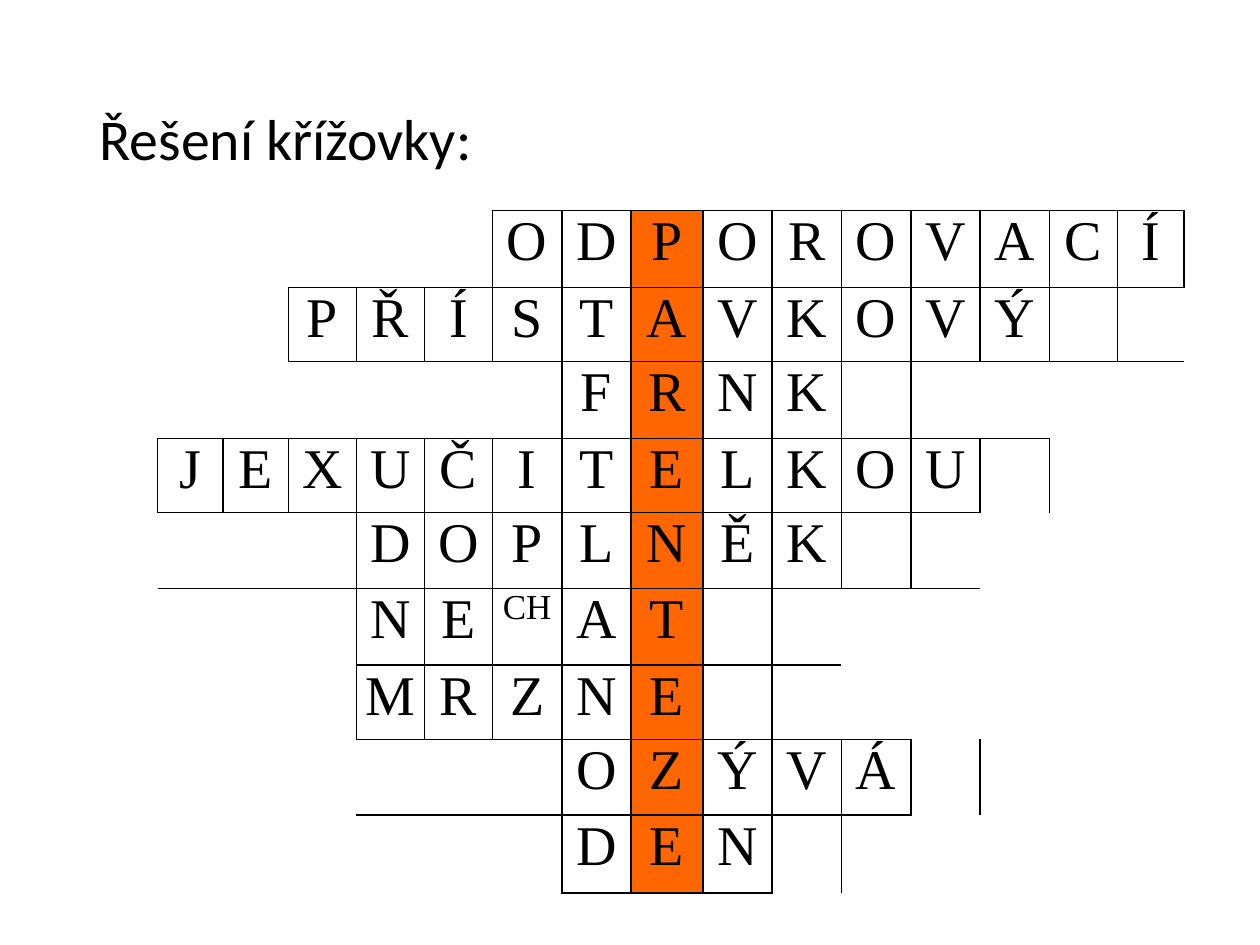
"""Build a slide with a solved Czech crossword as a table."""
from dataclasses import dataclass

from lxml import etree
from pptx import Presentation
from pptx.dml.color import RGBColor
from pptx.enum.text import MSO_ANCHOR, PP_ALIGN
from pptx.oxml.ns import qn
from pptx.util import Inches, Pt

CENTER, LEFT = PP_ALIGN.CENTER, PP_ALIGN.LEFT
MIDDLE = MSO_ANCHOR.MIDDLE
BLACK = RGBColor(0x00, 0x00, 0x00)
ORANGE = RGBColor(0xFF, 0x66, 0x00)
PLAIN_STYLE = "{2D5ABB26-0587-4C30-8999-92F81FD0307C}"
SIDES = {"a:lnL": (0, -1), "a:lnR": (0, 1), "a:lnT": (-1, 0), "a:lnB": (1, 0)}
SOLUTION_COLUMN = 7
COLUMN_WIDTHS = [0.52, 0.52, 0.54, 0.54, 0.54, 0.55, 0.55, 0.57,
                 0.55, 0.55, 0.55, 0.55, 0.55, 0.54, 0.53]
ROW_HEIGHTS = [0.61, 0.59, 0.61, 0.59, 0.6, 0.61, 0.59, 0.6, 0.62]


@dataclass(frozen=True)
class Answer:
    start: int
    letters: list[str]


ANSWERS = [
    Answer(5, list("ODPOROVACÍ")),
    Answer(2, list("PŘÍSTAVKOVÝ")),
    Answer(6, list("FRNK")),
    Answer(0, list("JEXUČITELKOU")),
    Answer(3, list("DOPLNĚK")),
    Answer(3, ["N", "E", "CH", "A", "T"]),
    Answer(3, list("MRZNE")),
    Answer(6, list("OZÝVÁ")),
    Answer(6, list("DEN")),
]


def add_border(cell, side: str) -> None:
    """Draw a thin black line along one side of a cell."""
    line = etree.SubElement(cell._tc.get_or_add_tcPr(), qn(side), w=str(Pt(1)))
    solid = etree.SubElement(line, qn("a:solidFill"))
    etree.SubElement(solid, qn("a:srgbClr"), val=str(BLACK))


def write_letter(cell, letter: str) -> None:
    """Put one centred crossword letter into a cell."""
    cell.margin_left = cell.margin_right = Inches(0.07)
    cell.margin_top = cell.margin_bottom = 0
    cell.text = letter
    paragraph = cell.text_frame.paragraphs[0]
    paragraph.alignment = CENTER
    paragraph.font.name = "Times New Roman"
    paragraph.font.size = Pt(32 if len(letter) == 1 else 20)
    paragraph.font.color.rgb = BLACK


def add_crossword(slide, answers: list[Answer]) -> None:
    """Add the crossword grid, with lines only around letters."""
    crossword = slide.shapes.add_table(
        len(ROW_HEIGHTS), len(COLUMN_WIDTHS), Inches(1.25), Inches(1.67),
        Inches(sum(COLUMN_WIDTHS)), Inches(sum(ROW_HEIGHTS))).table
    crossword.first_row = crossword.horz_banding = False
    crossword._tbl.tblPr.find(qn("a:tableStyleId")).text = PLAIN_STYLE
    for column, width in zip(crossword.columns, COLUMN_WIDTHS):
        column.width = Inches(width)
    for row, height in zip(crossword.rows, ROW_HEIGHTS):
        row.height = Inches(height)

    letters = {(row, answer.start + offset): letter
               for row, answer in enumerate(answers)
               for offset, letter in enumerate(answer.letters)}
    for row in range(len(ROW_HEIGHTS)):
        for column in range(len(COLUMN_WIDTHS)):
            cell = crossword.cell(row, column)
            for side, (down, right) in SIDES.items():
                if (row, column) in letters or (row + down, column + right) in letters:
                    add_border(cell, side)
            if column == SOLUTION_COLUMN:
                cell.fill.solid()
                cell.fill.fore_color.rgb = ORANGE
            else:
                cell.fill.background()
            if (row, column) in letters:
                write_letter(cell, letters[row, column])


def add_heading(slide, text: str) -> None:
    """Place and format the slide title."""
    heading = slide.shapes.title
    heading.left, heading.top = Inches(0.69), Inches(0.4)
    heading.width, heading.height = Inches(8.62), Inches(1.45)
    heading.text_frame.text = text
    heading.text_frame.vertical_anchor = MIDDLE
    paragraph = heading.text_frame.paragraphs[0]
    paragraph.alignment = LEFT
    paragraph.line_spacing = 0.9
    paragraph.font.name = "Calibri"
    paragraph.font.size = Pt(33)
    paragraph.font.color.rgb = BLACK


def main() -> None:
    """Create and save the presentation."""
    presentation = Presentation()
    presentation.slide_width, presentation.slide_height = Inches(10), Inches(7.5)
    slide = presentation.slides.add_slide(presentation.slide_layouts[5])
    add_heading(slide, "Řešení křížovky:")
    add_crossword(slide, ANSWERS)
    presentation.save("out.pptx")


if __name__ == "__main__":
    main()
